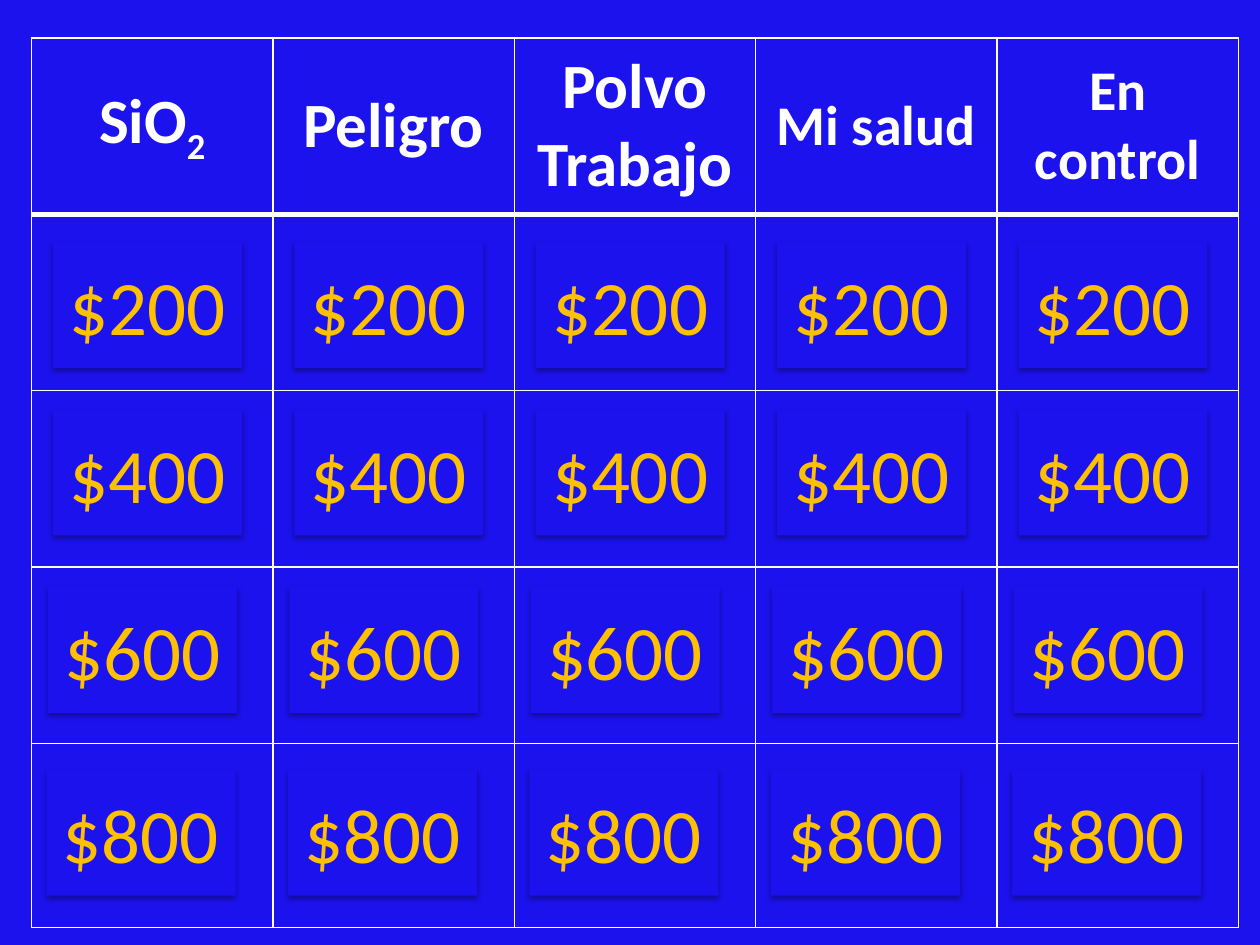
import pptx
import pptx.dml.color
import pptx.enum.shapes
import pptx.enum.text
import pptx.oxml
import pptx.oxml.ns
import pptx.util
from pptx.util import Inches

COLORS = {"board": "1C12EE", "heading": "FFFFFF", "price": "FFC000", "shadow": "000000"}
FONT = "Calibri"
HEADINGS = [("SiO2", 36), ("Peligro", 36), ("Polvo\nTrabajo", 36), ("Mi salud", 32), ("En control", 32)]
PRICE_ROWS = [("$200", 0.42, 1.92), ("$400", 0.42, 3.25), ("$600", 0.38, 4.66), ("$800", 0.37, 6.11)]
BOARD_LEFT, BOARD_TOP, BOARD_WIDTH = 0.25, 0.3, 9.58
ROW_HEIGHTS = [1.4, 1.4, 1.4, 1.4, 1.46]
COLUMN_WIDTH = BOARD_WIDTH / len(HEADINGS)


def rgb(name):
    return pptx.dml.color.RGBColor.from_string(COLORS[name])


def fill_solid(fill, name):
    fill.solid()
    fill.fore_color.rgb = rgb(name)


def format_run(run, size, color, bold=False):
    run.font.name = FONT
    run.font.size = pptx.util.Pt(size)
    run.font.bold = bold
    run.font.color.rgb = rgb(color)


def center_text(text_frame, size, color, bold=False):
    for paragraph in text_frame.paragraphs:
        paragraph.alignment = pptx.enum.text.PP_ALIGN.CENTER
        for run in paragraph.runs:
            format_run(run, size, color, bold)


def set_borders(cell, top, bottom):
    properties = cell._tc.get_or_add_tcPr()
    sides = [("L", 1), ("R", 1), ("T", top), ("B", bottom)]
    for position, (side, points) in enumerate(sides):
        border = pptx.oxml.parse_xml(
            f'<a:ln{side} {pptx.oxml.ns.nsdecls("a")} w="{pptx.util.Pt(points)}">'
            f'<a:solidFill><a:srgbClr val="{COLORS["heading"]}"/></a:solidFill></a:ln{side}>'
        )
        properties.insert(position, border)


def add_board(slide):
    board = slide.shapes.add_table(
        len(ROW_HEIGHTS), len(HEADINGS), Inches(BOARD_LEFT), Inches(BOARD_TOP),
        Inches(BOARD_WIDTH), Inches(sum(ROW_HEIGHTS)),
    ).table
    for column in board.columns:
        column.width = Inches(COLUMN_WIDTH)
    for index, height in enumerate(ROW_HEIGHTS):
        board.rows[index].height = Inches(height)
        for cell in board.rows[index].cells:
            fill_solid(cell.fill, "board")
            set_borders(cell, 3 if index == 1 else 1, 3 if index == 0 else 1)
    for cell, (heading, size) in zip(board.rows[0].cells, HEADINGS):
        add_heading(cell, heading, size)


def add_heading(cell, heading, size):
    cell.vertical_anchor = pptx.enum.text.MSO_ANCHOR.MIDDLE
    base = heading.rstrip("2")
    cell.text_frame.text = base
    if base != heading:
        subscript = cell.text_frame.paragraphs[0].add_run()
        subscript.text = heading[len(base):]
        subscript.font._element.set("baseline", "-25000")
    center_text(cell.text_frame, size, "heading", True)


def add_price(slide, price, left, top):
    tile = slide.shapes.add_shape(
        pptx.enum.shapes.MSO_SHAPE.RECTANGLE, Inches(left), Inches(top), Inches(1.5), Inches(1)
    )
    fill_solid(tile.fill, "board")
    tile.line.fill.background()
    add_shadow(tile)
    tile.text_frame.text = price
    tile.text_frame.vertical_anchor = pptx.enum.text.MSO_ANCHOR.MIDDLE
    center_text(tile.text_frame, 44, "price")


def add_shadow(tile):
    tile.shadow.inherit = False
    effects = tile._element.spPr.find(pptx.oxml.ns.qn("a:effectLst"))
    effects.append(pptx.oxml.parse_xml(
        f'<a:outerShdw {pptx.oxml.ns.nsdecls("a")} blurRad="{pptx.util.Pt(3.1)}" '
        f'dist="{pptx.util.Pt(1.8)}" dir="5400000" rotWithShape="0">'
        f'<a:srgbClr val="{COLORS["shadow"]}"><a:alpha val="35000"/></a:srgbClr></a:outerShdw>'
    ))


def main():
    presentation = pptx.Presentation()
    presentation.slide_width = Inches(10)
    presentation.slide_height = Inches(7.5)
    slide = presentation.slides.add_slide(presentation.slide_layouts[6])
    fill_solid(slide.background.fill, "board")
    add_board(slide)
    for price, left, top in PRICE_ROWS:
        for column in range(len(HEADINGS)):
            add_price(slide, price, left + column * COLUMN_WIDTH, top)
    presentation.save("out.pptx")


if __name__ == "__main__":
    main()
